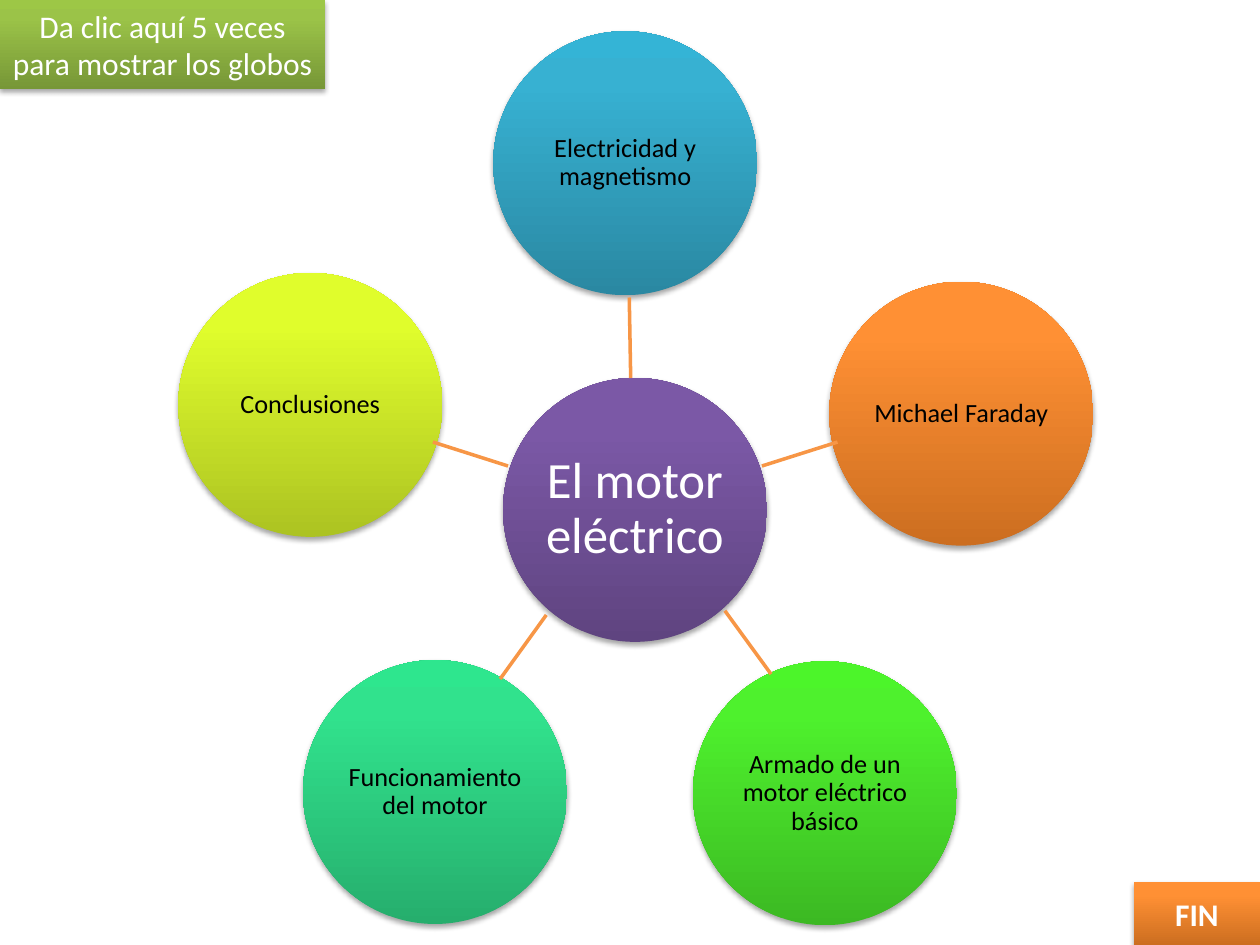
from copy import deepcopy

from lxml import etree
from pptx import Presentation
from pptx.dml.color import RGBColor
from pptx.enum.shapes import MSO_CONNECTOR, MSO_SHAPE
from pptx.enum.text import MSO_ANCHOR, PP_ALIGN
from pptx.oxml.ns import qn
from pptx.util import Pt

OVAL, RECTANGLE = MSO_SHAPE.OVAL, MSO_SHAPE.RECTANGLE
ACTION_BUTTON = MSO_SHAPE.ACTION_BUTTON_CUSTOM
STRAIGHT = MSO_CONNECTOR.STRAIGHT
CENTER, MIDDLE = PP_ALIGN.CENTER, MSO_ANCHOR.MIDDLE

FONT = "Calibri"
STOP_POSITIONS = (0, 0.8, 1)
DIAMETER = 150.8
ORANGE = ("CC6E20", "FF9034", "FF9136")
GREEN = ("779737", "9BC348", "9DC746")
PURPLE = ("5F4480", "7B58A6", "7C57A8")

TOPICS = [
    ("Michael Faraday", 473.9, 161, ORANGE),
    ("Electricidad y magnetismo", 281.9, 17.9, ("2A88A2", "37B1D2", "34B4D6")),
    ("Funcionamiento del motor", 173.2, 377.2, ("26AE6D", "31E28D", "2EE68E")),
    ("Armado de un motor eléctrico básico", 396, 377.9, ("3CB923", "4EF12D", "4CF52A")),
    ("Conclusiones", 101.9, 156, ("ACC322", "E0FD2C", "E2FF2B")),
]
SPOKES = [
    (360.4, 216, 359.6, 170),
    (290.3, 266.3, 247.4, 252.6),
    (435.4, 266.3, 478.6, 252.6),
    (312.2, 351.4, 285.8, 388),
    (414.2, 349, 440.6, 385.2),
]


def rgb(hex_color):
    return RGBColor.from_string(hex_color)


def write_text(shape, text, size=18, color="FFFFFF", bold=False, inset=None, spacing=None):
    frame = shape.text_frame
    frame.word_wrap = True
    frame.vertical_anchor = MIDDLE
    if inset is not None:
        frame.margin_left = frame.margin_right = Pt(inset)
        frame.margin_top = frame.margin_bottom = Pt(inset)
    paragraph = frame.paragraphs[0]
    paragraph.alignment = CENTER
    if spacing:
        paragraph.line_spacing = spacing
    run = paragraph.add_run()
    run.text = text
    run.font.name = FONT
    run.font.size = Pt(size)
    run.font.bold = bold
    run.font.color.rgb = rgb(color)


def add_shadow(shape):
    shape.shadow.inherit = False
    effects = shape._element.spPr.find(qn("a:effectLst"))
    shadow = etree.SubElement(effects, qn("a:outerShdw"), blurRad=str(Pt(3.1)),
                              dist=str(Pt(1.8)), dir="5400000", rotWithShape="0")
    black = etree.SubElement(shadow, qn("a:srgbClr"), val="000000")
    etree.SubElement(black, qn("a:alpha"), val="35000")


def add_glossy_shape(slide, kind, box, colors):
    shape = slide.shapes.add_shape(kind, *map(Pt, box))
    shape.line.fill.background()
    shape.fill.gradient()
    shape.fill.gradient_angle = 90
    stop_list = shape._element.spPr.find(".//" + qn("a:gsLst"))
    stop_list.append(deepcopy(stop_list[-1]))
    for stop, position, color in zip(shape.fill.gradient_stops, STOP_POSITIONS, colors):
        stop.position = position
        stop.color.rgb = rgb(color)
    add_shadow(shape)
    return shape


def add_globe(slide, text, left, top, colors, size=15, color="000000"):
    globe = add_glossy_shape(slide, OVAL, (left, top, DIAMETER, DIAMETER), colors)
    write_text(globe, text, size=size, color=color, inset=1, spacing=0.9)


def add_spoke(slide, ends):
    spoke = slide.shapes.add_connector(STRAIGHT, *map(Pt, ends))
    spoke.line.color.rgb = rgb("F79646")
    spoke.line.width = Pt(2)
    etree.SubElement(spoke._element.spPr, qn("a:effectLst"))


def add_radial_diagram(slide, left, top):
    for text, x, y, colors in TOPICS:
        add_globe(slide, text, left + x, top + y, colors)
    add_globe(slide, "El motor eléctrico", left + 287.5, top + 216, PURPLE,
              size=29, color="FFFFFF")
    for x1, y1, x2, y2 in SPOKES:
        add_spoke(slide, (left + x1, top + y1, left + x2, top + y2))


def add_label(slide, kind, box, colors, text, bold=False):
    label = add_glossy_shape(slide, kind, box, colors)
    write_text(label, text, bold=bold)


def main():
    deck = Presentation()
    deck.slide_width, deck.slide_height = Pt(720), Pt(540)
    slide = deck.slides.add_slide(deck.slide_layouts[6])
    add_radial_diagram(slide, 0, 0)
    add_label(slide, RECTANGLE, (0, 0, 185.8, 50.9), GREEN,
              "Da clic aquí 5 veces para mostrar los globos")
    add_label(slide, ACTION_BUTTON, (648, 504, 72, 36), ORANGE, "FIN", bold=True)
    deck.save("out.pptx")


if __name__ == "__main__":
    main()
